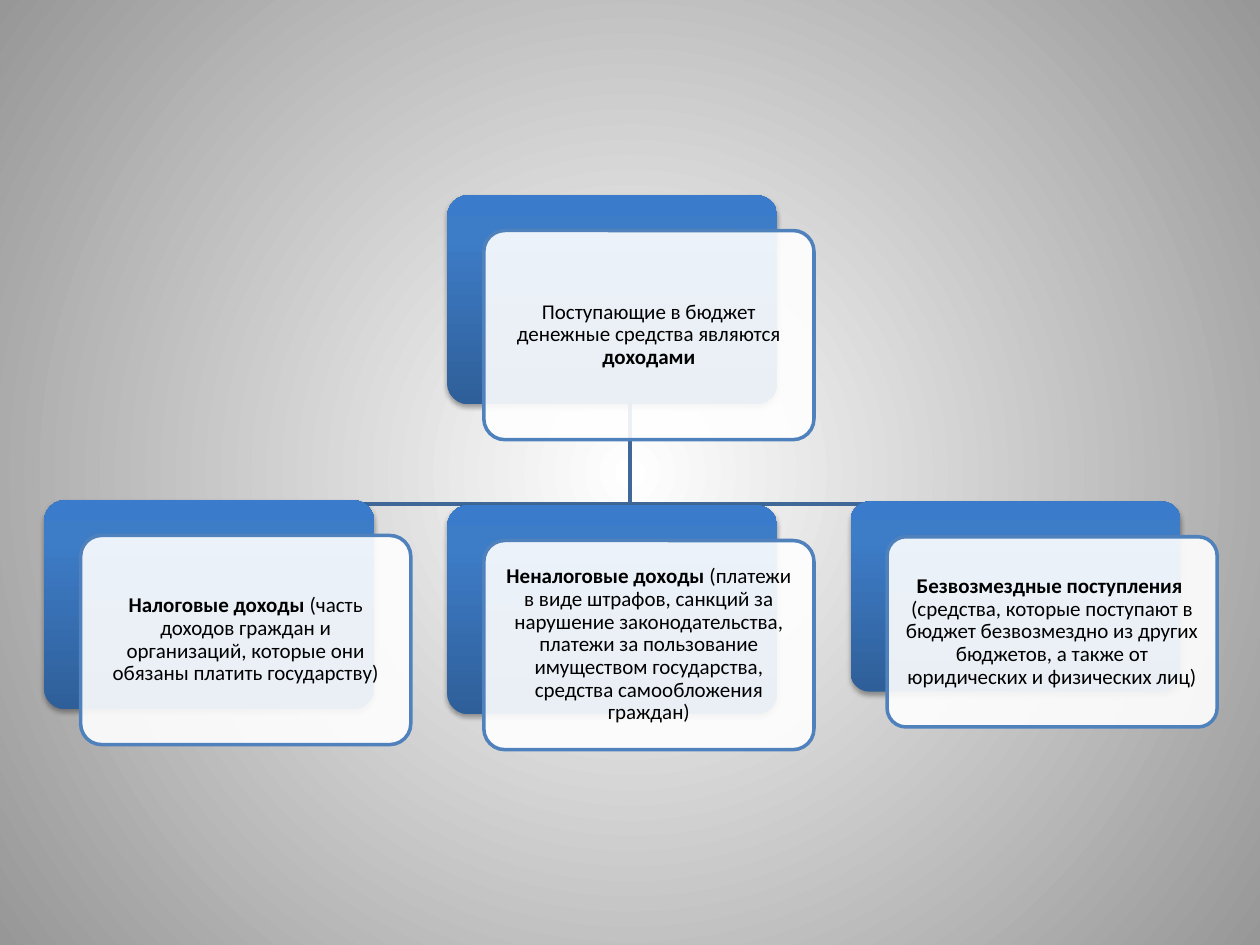
from dataclasses import dataclass

from lxml import etree
from pptx import Presentation, util as u
from pptx.dml import color
from pptx.enum import shapes, text
from pptx.oxml import ns

COLORS = {
    "page_center": "FFFFFF",
    "page_edge": "979797",
    "back_bottom": "2F5F99",
    "back_middle": "3D7CC7",
    "back_top": "3A7CCB",
    "card": "FFFFFF",
    "border": "4F81BD",
    "branch": "3F6797",
    "ink": "000000",
    "shadow": "000000",
}
SLIDE_W, SLIDE_H = 10, 7.5
MARGIN, PITCH = 0.35, 3.2
CARD_W = 2.62
OFFSET_X, OFFSET_Y = 0.29, 0.28
BRANCH_Y = 3.73
INSET = 0.1

FRAME_FORMAT = {
    "word_wrap": True,
    "vertical_anchor": text.MSO_ANCHOR.MIDDLE,
    "margin_left": u.Inches(INSET),
    "margin_right": u.Inches(INSET),
    "margin_top": u.Inches(INSET),
    "margin_bottom": u.Inches(INSET),
}
PARAGRAPH_FORMAT = {"alignment": text.PP_ALIGN.CENTER, "line_spacing": 0.9}
FONT_FORMAT = {"name": "Calibri", "size": u.Pt(12)}


@dataclass(frozen=True)
class Phrase:
    words: str
    bold: bool = False


@dataclass(frozen=True)
class Node:
    column: int
    top: float
    height: float
    paragraphs: tuple[tuple[Phrase, ...], ...]

    @property
    def left(self) -> float:
        return MARGIN + self.column * PITCH

    @property
    def center(self) -> float:
        return self.left + CARD_W / 2


INCOME = Node(1, 1.55, 1.66, ((
    Phrase("Поступающие в бюджет денежные средства являются "),
    Phrase("доходами", True),
),))
SOURCES = (
    Node(0, 3.97, 1.66, ((
        Phrase("Налоговые доходы ", True),
        Phrase("(часть доходов граждан и организаций, которые они обязаны "
               "платить государству)"),
    ),)),
    Node(1, 4.01, 1.66, ((
        Phrase("Неналоговые доходы ", True),
        Phrase("(платежи в виде штрафов, санкций за нарушение "
               "законодательства, платежи за пользование имуществом "
               "государства, средства самообложения граждан)"),
    ),)),
    Node(2, 3.98, 1.51, (
        (Phrase("Безвозмездные поступления ", True),),
        (Phrase("(средства, которые поступают в бюджет безвозмездно из "
                "других бюджетов, а также от юридических и физических лиц)"),),
    )),
)


def rgb(name: str) -> color.RGBColor:
    return color.RGBColor.from_string(COLORS[name])


def apply_format(target, values: dict) -> None:
    for attribute, value in values.items():
        setattr(target, attribute, value)


def set_gradient(parent, stops: dict[int, str], direction: str) -> None:
    marks = "".join(
        f'<a:gs pos="{share * 1000}"><a:srgbClr val="{COLORS[name]}"/></a:gs>'
        for share, name in stops.items()
    )
    gradient = etree.fromstring(
        f'<a:gradFill {ns.nsdecls("a")} rotWithShape="1">'
        f"<a:gsLst>{marks}</a:gsLst>{direction}</a:gradFill>"
    )
    parent.replace(parent.find(ns.qn("a:solidFill")), gradient)


def paint_background(slide) -> None:
    slide.background.fill.solid()
    set_gradient(
        slide.element.find(".//" + ns.qn("p:bgPr")),
        {0: "page_center", 100: "page_edge"},
        '<a:path path="circle"><a:fillToRect l="50000" t="50000" '
        'r="50000" b="50000"/></a:path>',
    )


def add_shadow(shape) -> None:
    effects = shape.element.spPr.find(ns.qn("a:effectLst"))
    effects.append(etree.fromstring(
        f'<a:outerShdw {ns.nsdecls("a")} blurRad="{u.Pt(3.1)}" '
        f'dist="{u.Pt(1.8)}" dir="5400000" rotWithShape="0">'
        f'<a:srgbClr val="{COLORS["shadow"]}"><a:alpha val="35000"/>'
        "</a:srgbClr></a:outerShdw>"
    ))


def add_panel(slide, left: float, top: float, height: float):
    panel = slide.shapes.add_shape(
        shapes.MSO_SHAPE.ROUNDED_RECTANGLE,
        *(u.Inches(length) for length in (left, top, CARD_W, height)),
    )
    panel.adjustments[0] = 0.1
    panel.shadow.inherit = False
    panel.fill.solid()
    return panel


def write_phrases(frame, paragraphs: tuple[tuple[Phrase, ...], ...]) -> None:
    apply_format(frame, FRAME_FORMAT)
    for index, phrases in enumerate(paragraphs):
        paragraph = frame.add_paragraph() if index else frame.paragraphs[0]
        apply_format(paragraph, PARAGRAPH_FORMAT)
        for phrase in phrases:
            run = paragraph.add_run()
            run.text = phrase.words
            apply_format(run.font, FONT_FORMAT | {"bold": phrase.bold})
            run.font.color.rgb = rgb("ink")


def draw_node(slide, node: Node) -> None:
    back = add_panel(slide, node.left, node.top, node.height)
    back.line.fill.background()
    set_gradient(
        back.element.spPr,
        {0: "back_bottom", 80: "back_middle", 100: "back_top"},
        '<a:lin ang="16200000" scaled="0"/>',
    )
    add_shadow(back)

    card = add_panel(
        slide, node.left + OFFSET_X, node.top + OFFSET_Y, node.height
    )
    card.fill.fore_color.rgb = rgb("card")
    fill_color = card.element.spPr.find(ns.qn("a:solidFill"))[0]
    etree.SubElement(fill_color, ns.qn("a:alpha"), val="90000")
    card.line.color.rgb = rgb("border")
    card.line.width = u.Pt(2)
    write_phrases(card.text_frame, node.paragraphs)


def draw_branch(slide, parent: Node, child: Node) -> None:
    start = (parent.center, parent.top + parent.height)
    bends = (
        (parent.center, BRANCH_Y),
        (child.center, BRANCH_Y),
        (child.center, child.top),
    )
    builder = slide.shapes.build_freeform(*start, scale=u.Inches(1))
    builder.add_line_segments(bends, close=False)
    branch = builder.convert_to_shape()
    branch.shadow.inherit = False
    branch.fill.background()
    branch.line.color.rgb = rgb("branch")
    branch.line.width = u.Pt(2)


def main() -> None:
    deck = Presentation()
    apply_format(deck, {
        "slide_width": u.Inches(SLIDE_W),
        "slide_height": u.Inches(SLIDE_H),
    })
    slide = deck.slides.add_slide(deck.slide_layouts[6])
    paint_background(slide)
    for source in SOURCES:
        if source.column != INCOME.column:
            draw_branch(slide, INCOME, source)
    for node in (INCOME, *SOURCES):
        draw_node(slide, node)
    deck.save("out.pptx")


if __name__ == "__main__":
    main()
